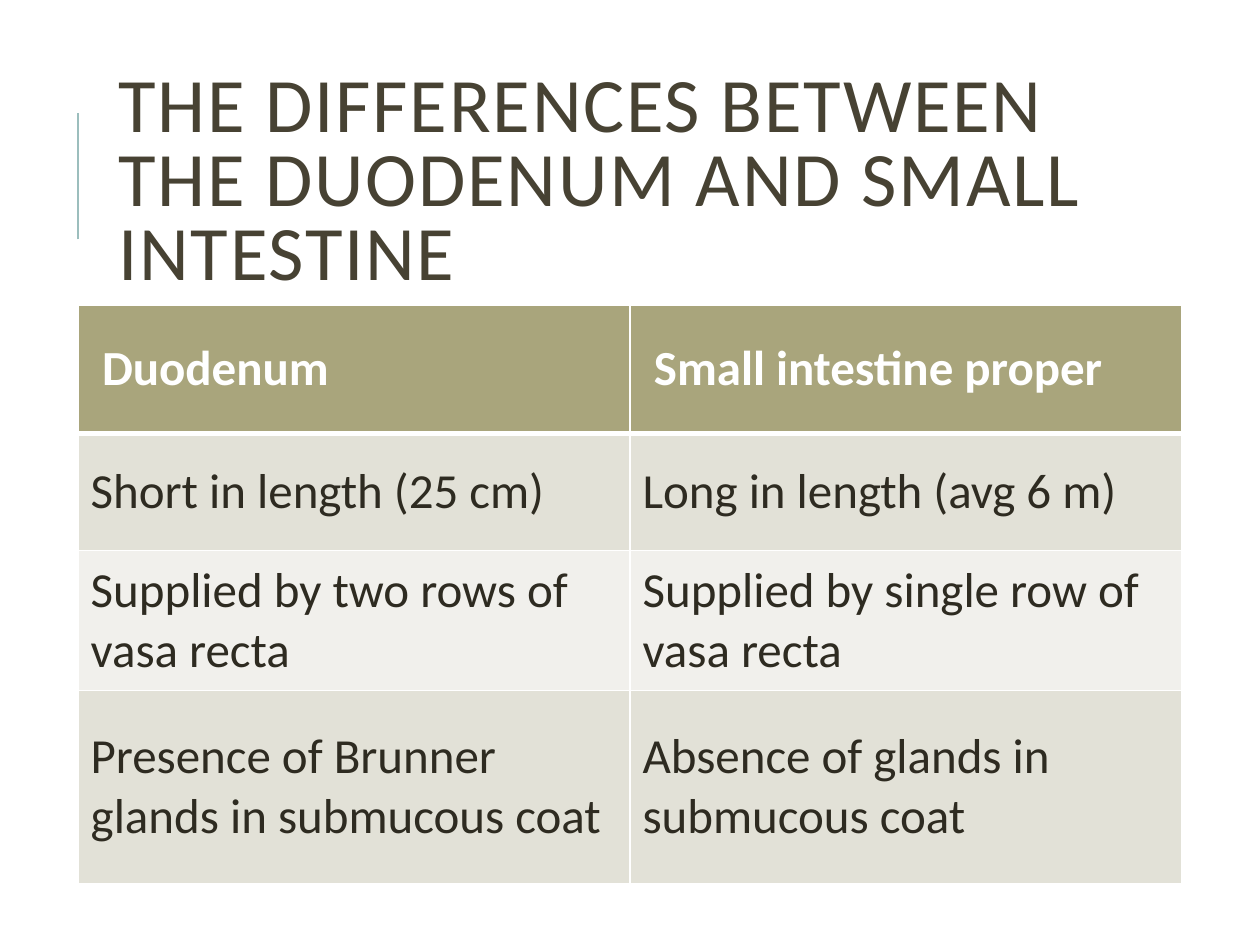
from lxml.etree import SubElement
from pptx import Presentation
from pptx.dml.color import RGBColor
from pptx.enum.shapes import MSO_CONNECTOR
from pptx.enum.text import MSO_ANCHOR, MSO_AUTO_SIZE, PP_ALIGN
from pptx.oxml.ns import qn
from pptx.util import Inches, Pt

FONT = "Calibri"
WHITE, HEADER, BAND_DARK, BAND_LIGHT = "FFFFFF", "A9A57C", "E2E1D7", "F1F0EC"
TITLE_COLOR, BODY_COLOR, ACCENT = "474233", "2E2B21", "9CBEBD"
LEFT, TABLE_TOP, COLUMN_WIDTH = 0.62, 2.42, 4.38
ROW_HEIGHTS = [1.02, 0.93, 0.93, 1.53]
TITLE = "THE DIFFERENCES BETWEEN THE DUODENUM AND SMALL INTESTINE"
ROWS = [
    ("Duodenum", "Small intestine proper"),
    ("Short in length (25 cm)", "Long in length (avg 6 m)"),
    ("Supplied by two rows of vasa recta", "Supplied by single row of vasa recta"),
    ("Presence of Brunner glands in submucous coat", "Absence of glands in submucous coat"),
]


def rgb(value):
    """Turn a hex string into a colour."""
    return RGBColor.from_string(value)


def add_span(para, text, size, color, bold=False):
    """Add one formatted run to a paragraph."""
    span = para.add_run()
    span.text = text
    span.font.name = FONT
    span.font.size = Pt(size)
    span.font.bold = bold
    span.font.color.rgb = rgb(color)
    return span


def add_accent_line(slide):
    """Draw the vertical rule beside the title."""
    line = slide.shapes.add_connector(
        MSO_CONNECTOR.STRAIGHT, Inches(LEFT), Inches(1.9), Inches(LEFT), Inches(0.9))
    line.line.color.rgb = rgb(ACCENT)
    line.line.width = Pt(1.5)
    SubElement(line.element.spPr, qn("a:effectLst"))


def set_title(slide):
    """Place and format the title placeholder."""
    box = slide.shapes.title
    box.left, box.top, box.width, box.height = map(Inches, (0.84, 0.64, 7.97, 1.64))
    frame = box.text_frame
    frame.word_wrap = True
    frame.auto_size = MSO_AUTO_SIZE.NONE
    frame.vertical_anchor = MSO_ANCHOR.MIDDLE
    para = frame.paragraphs[0]
    para.alignment = PP_ALIGN.LEFT
    para.line_spacing = 0.8
    span = add_span(para, TITLE, 44, TITLE_COLOR)
    span.font._element.set("spc", "100")


def set_border(cell, side, width):
    """Give one side of a cell a white border."""
    border = SubElement(cell._tc.get_or_add_tcPr(), qn(f"a:ln{side}"), w=str(Pt(width)))
    fill = SubElement(border, qn("a:solidFill"))
    SubElement(fill, qn("a:srgbClr"), val=WHITE)


def format_cell(cell, text, row):
    """Fill a cell with its text, borders and row colour."""
    is_header = row == 0
    for side in "LRTB":
        thick = (is_header and side == "B") or (row == 1 and side == "T")
        set_border(cell, side, 3 if thick else 1)
    cell.fill.solid()
    cell.fill.fore_color.rgb = rgb(
        HEADER if is_header else BAND_DARK if row % 2 else BAND_LIGHT)
    cell.vertical_anchor = MSO_ANCHOR.MIDDLE
    cell.margin_left = cell.margin_right = Inches(0.19 if is_header else 0.1)
    cell.margin_top = cell.margin_bottom = Inches(0.1 if is_header else 0.08)
    add_span(cell.text_frame.paragraphs[0], text, 28,
             WHITE if is_header else BODY_COLOR, is_header)


def add_comparison_table(slide):
    """Add the table that compares the two parts of the intestine."""
    table = slide.shapes.add_table(
        len(ROWS), 2, Inches(LEFT), Inches(TABLE_TOP),
        Inches(2 * COLUMN_WIDTH), Inches(sum(ROW_HEIGHTS))).table
    for column in table.columns:
        column.width = Inches(COLUMN_WIDTH)
    for row, (texts, height) in enumerate(zip(ROWS, ROW_HEIGHTS)):
        table.rows[row].height = Inches(height)
        for column, text in enumerate(texts):
            format_cell(table.cell(row, column), text, row)


def main():
    """Build the slide and save the deck."""
    deck = Presentation()
    deck.slide_width, deck.slide_height = Inches(10), Inches(7.5)
    slide = deck.slides.add_slide(deck.slide_layouts[5])
    add_accent_line(slide)
    set_title(slide)
    add_comparison_table(slide)
    deck.save("out.pptx")


if __name__ == "__main__":
    main()
